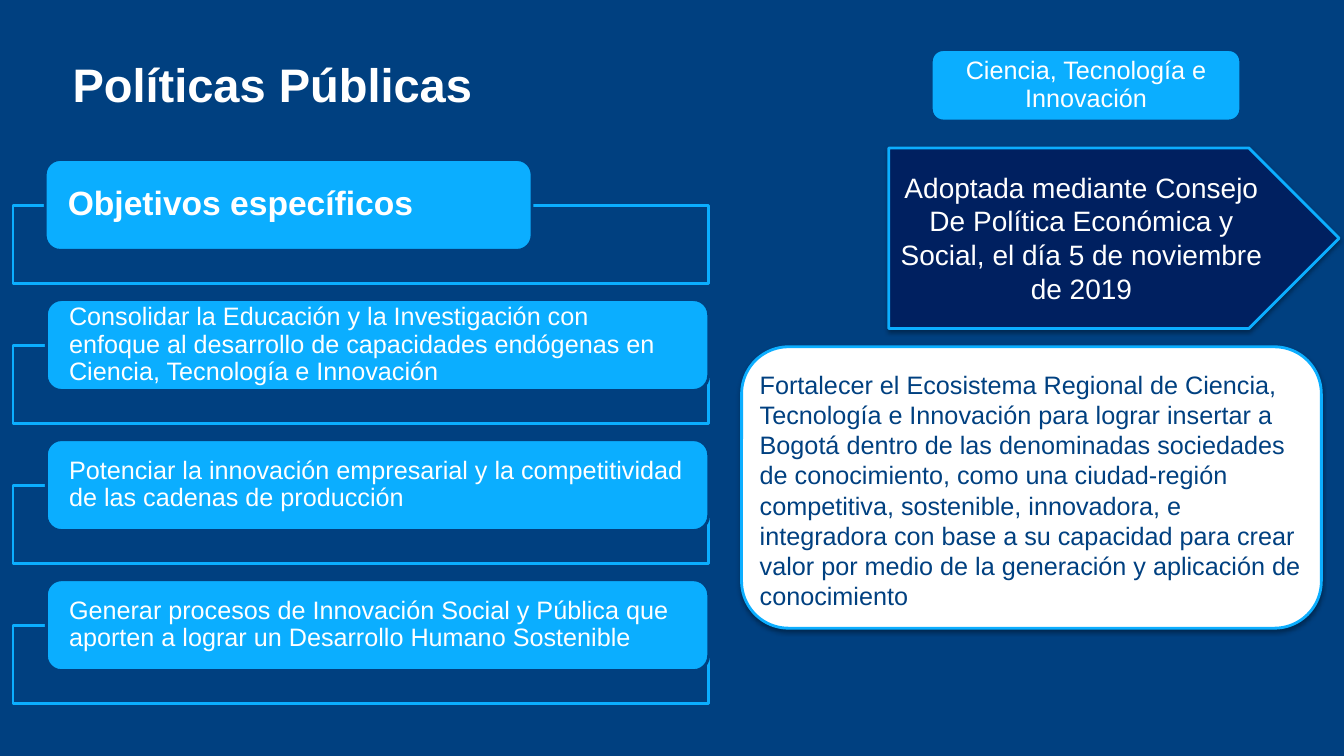
from lxml import etree
from pptx import Presentation
from pptx.dml.color import RGBColor
from pptx.enum import shapes, text
from pptx.oxml.ns import qn
from pptx.util import Cm, Pt

NAVY = RGBColor(0x00, 0x40, 0x80)
DEEP_NAVY = RGBColor(0x00, 0x20, 0x60)
SKY = RGBColor(0x0B, 0xAE, 0xFF)
EDGE = RGBColor(0x0C, 0xAE, 0xFF)
WHITE = RGBColor(0xFF, 0xFF, 0xFF)
ROUNDED = shapes.MSO_SHAPE.ROUNDED_RECTANGLE
LEFT, CENTER = text.PP_ALIGN.LEFT, text.PP_ALIGN.CENTER
TOP, MIDDLE = text.MSO_ANCHOR.TOP, text.MSO_ANCHOR.MIDDLE


def write(shape, *paragraphs, size=18, color=WHITE, bold=False, align=LEFT,
          anchor=MIDDLE, spacing=None, insets=(0.13, 0.13, 0.13, 0.13)):
    frame = shape.text_frame
    frame.word_wrap = True
    frame.auto_size = text.MSO_AUTO_SIZE.NONE
    frame.vertical_anchor = anchor
    frame.margin_left, frame.margin_top, frame.margin_right, frame.margin_bottom = map(Cm, insets)
    frame.text = "\n".join(paragraphs)
    for paragraph in frame.paragraphs:
        paragraph.alignment = align
        paragraph.line_spacing = spacing
        for run in paragraph.runs:
            run.font.name = "Arial"
            run.font.size = Pt(size)
            run.font.bold = bold
            run.font.color.rgb = color


def add_block(kind, left, top, width, height, fill, line, shadow=False):
    block = slide.shapes.add_shape(kind, Cm(left), Cm(top), Cm(width), Cm(height))
    block.fill.solid()
    block.fill.fore_color.rgb = fill
    block.line.color.rgb = line
    block.line.width = Pt(2)
    block.shadow.inherit = False
    if shadow:
        effects = block._element.spPr.find(qn("a:effectLst"))
        outer = etree.SubElement(effects, qn("a:outerShdw"), blurRad=str(Pt(3)),
                                 dist=str(Pt(1.8)), dir="5400000", rotWithShape="0")
        black = etree.SubElement(outer, qn("a:srgbClr"), val="000000")
        etree.SubElement(black, qn("a:alpha"), val="35000")
    return block


deck = Presentation()
deck.slide_width, deck.slide_height = Cm(33.87), Cm(19.05)
slide = deck.slides.add_slide(deck.slide_layouts[5])
slide.background.fill.solid()
slide.background.fill.fore_color.rgb = NAVY

title = slide.shapes.title
title.left, title.top, title.width, title.height = Cm(1.7), Cm(1.27), Cm(30.48), Cm(3.18)
write(title, "Políticas Públicas", size=33.6, bold=True, anchor=TOP)

topic = add_block(ROUNDED, 23.47, 1.25, 7.8, 1.8, SKY, NAVY)
write(topic, "Ciencia, Tecnología e Innovación", align=CENTER, spacing=0.9,
      insets=(0.18, 0.1, 0.18, 0.1))

objectives = [
    ("Objetivos específicos", 1.14, 12.27, 24, True),
    ("Consolidar la Educación y la Investigación con enfoque al desarrollo de "
     "capacidades endógenas en Ciencia, Tecnología e Innovación", 1.17, 16.69, 18, False),
    ("Potenciar la innovación empresarial y la competitividad de las cadenas de producción",
     1.17, 16.69, 18, False),
    ("Generar procesos de Innovación Social y Pública que aporten a lograr un "
     "Desarrollo Humano Sostenible", 1.17, 16.69, 18, False),
]
for row, (objective, left, width, size, bold) in enumerate(objectives):
    top = 4.02 + row * 3.53
    add_block(shapes.MSO_SHAPE.RECTANGLE, 0.33, top + 1.16, 17.53, 1.96, NAVY, SKY)
    label = add_block(ROUNDED, left, top, width, 2.29, SKY, NAVY)
    write(label, objective, size=size, bold=bold, spacing=0.9, insets=(0.46, 0, 0.46, 0))

adoption = add_block(shapes.MSO_SHAPE.PENTAGON, 22.4, 3.73, 11.35, 4.55, DEEP_NAVY, EDGE, shadow=True)
write(adoption, "Adoptada mediante Consejo",
      "De Política Económica y Social, el día 5 de noviembre de 2019",
      size=20, align=CENTER, anchor=TOP, insets=(0.13, 0.56, 0.63, 0.13))

purpose = add_block(ROUNDED, 18.69, 8.74, 14.61, 7.09, WHITE, EDGE, shadow=True)
write(purpose,
      "Fortalecer el Ecosistema Regional de Ciencia, Tecnología e Innovación para lograr "
      "insertar a Bogotá dentro de las denominadas sociedades de conocimiento, como una "
      "ciudad-región competitiva, sostenible, innovadora, e integradora con base a su "
      "capacidad para crear valor por medio de la generación y aplicación de conocimiento",
      color=NAVY, anchor=TOP, insets=(0.11, 0.21, 0.1, 0))

deck.save("out.pptx")
